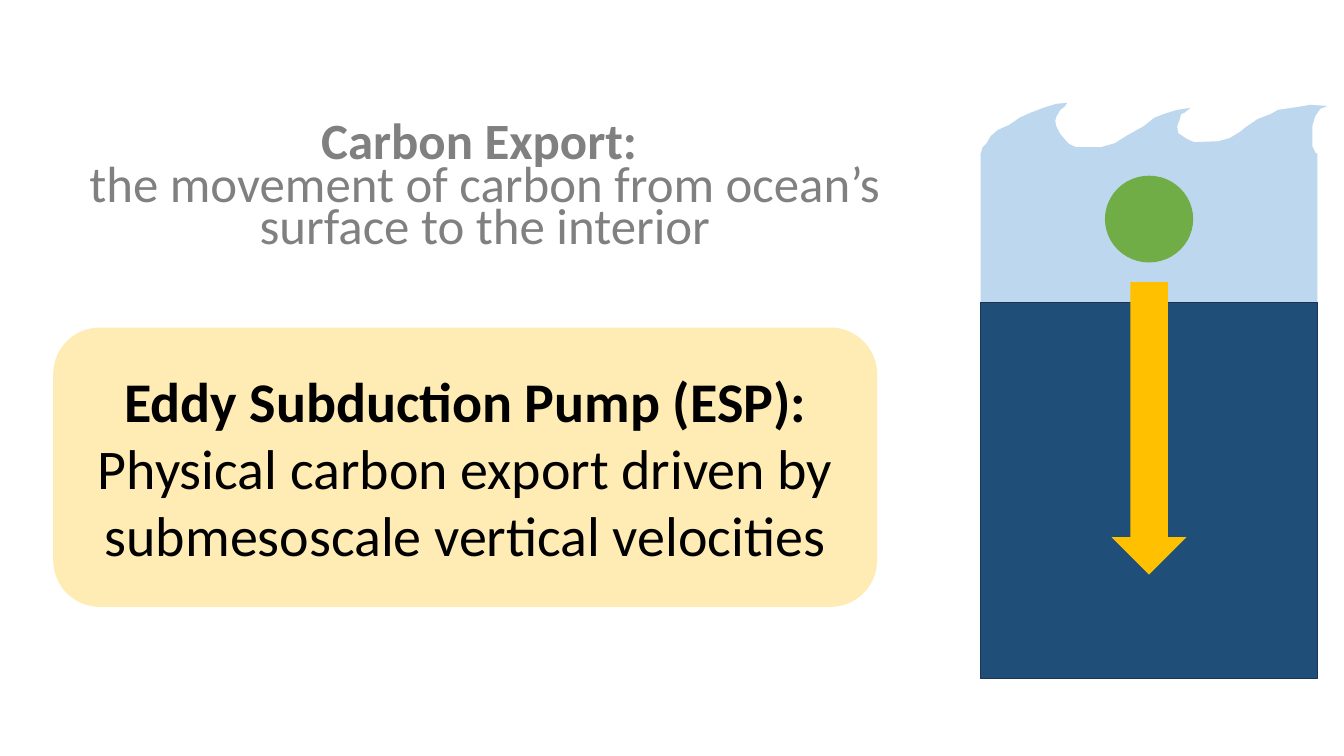
import copy

import pptx
import pptx.dml.color
import pptx.enum.shapes
import pptx.enum.text
import pptx.oxml.ns
import pptx.util
from lxml import etree

Pt = pptx.util.Pt
SHAPES = pptx.enum.shapes.MSO_SHAPE

EXPORT = [[("Carbon Export: ", True),
           ("the movement of carbon from ocean’s surface to the interior", False)]]
PUMP = [[("Eddy Subduction Pump (ESP):", True)],
        [("Physical carbon export driven by submesoscale vertical velocities", False)]]

SURFACE_BLUE = "BDD7EE"
OCEAN_LEFT, OCEAN_WIDTH = 700.5, 240.5
OCEAN_CENTER = OCEAN_LEFT + OCEAN_WIDTH / 2
WAVE_TOP = 73.5

# Wave outline, measured from the left edge and the top of the crests
WAVE = [
    (0, 36.7), (1.4, 31.7), (4.3, 28.8), (7.2, 23.8), (12.2, 19.4), (20.2, 15.8),
    (24.5, 13), (27.4, 10.8), (35.3, 7.2), (44.6, 3.6), (54, 0.7), (61.9, 0),
    (59.8, 2.9), (56.9, 5), (54, 10.1), (53.3, 13), (54, 16.6), (56.9, 22.3),
    (61.9, 28.1), (63.4, 29.5), (68.4, 31.7), (85.7, 31.7), (95.8, 28.8),
    (105.1, 23), (116.6, 16.6), (123.8, 10.8), (131, 7.9), (140.4, 5), (149.8, 3.6),
    (145.4, 7.2), (143.3, 7.9), (141.8, 13), (140.4, 16.6), (141.1, 21.6),
    (147.6, 25.9), (152.6, 28.1), (169.9, 27.4), (177.8, 25.2), (185, 20.9),
    (189.4, 17.3), (198, 11.5), (207.4, 7.9), (212.4, 5), (226.8, 2.9),
    (235.4, 1.4), (247.7, 2.2), (242.6, 4.3), (239, 9.4), (236.9, 16.6),
    (236.9, 31), (240.5, 38.2),
]


def rgb(hex_color):
    return pptx.dml.color.RGBColor.from_string(hex_color)


def paint(shape, fill, line=None, opacity=None):
    shape.shadow.inherit = False
    shape.fill.solid()
    shape.fill.fore_color.rgb = rgb(fill)
    if opacity is not None:
        color = shape.fill._xPr.find(".//" + pptx.oxml.ns.qn("a:srgbClr"))
        etree.SubElement(color, pptx.oxml.ns.qn("a:alpha"), val=str(opacity * 1000))
    if line:
        shape.line.color.rgb = rgb(line)
        shape.line.width = Pt(1)
    else:
        shape.line.fill.background()


def add_painted(kind, left, top, width, height, fill, **style):
    shape = slide.shapes.add_shape(kind, Pt(left), Pt(top), Pt(width), Pt(height))
    paint(shape, fill, **style)
    return shape


def write_text(shape, paragraphs, size, color, spacing=1.0):
    """Write centred paragraphs of (text, bold) runs, with a line break between runs."""
    frame = shape.text_frame
    frame.word_wrap = True
    frame.auto_size = pptx.enum.text.MSO_AUTO_SIZE.NONE
    frame.vertical_anchor = pptx.enum.text.MSO_ANCHOR.MIDDLE
    for index, runs in enumerate(paragraphs):
        paragraph = frame.add_paragraph() if index else frame.paragraphs[0]
        paragraph.alignment = pptx.enum.text.PP_ALIGN.CENTER
        paragraph.line_spacing = spacing
        paragraph.space_before = Pt(0)
        for position, (text, bold) in enumerate(runs):
            if position:
                paragraph.add_line_break()
                # The break takes the size of the run before it
                paragraph._p[-1].append(copy.deepcopy(run._r.rPr))
            run = paragraph.add_run()
            run.text = text
            run.font.name = "Calibri"
            run.font.size = Pt(size)
            run.font.bold = bold
            run.font.color.rgb = rgb(color)


presentation = pptx.Presentation()
presentation.slide_width, presentation.slide_height = Pt(960), Pt(540)
slide = presentation.slides.add_slide(presentation.slide_layouts[5])

title = slide.shapes.title
title.left, title.top, title.width, title.height = Pt(38), Pt(83), Pt(617), Pt(104.5)
write_text(title, EXPORT, size=36.3, color="808080", spacing=0.7)

pump = add_painted(SHAPES.ROUNDED_RECTANGLE, 38, 234, 588.5, 199.5, "FFE699", opacity=73)
write_text(pump, PUMP, size=40, color="000000")

add_painted(SHAPES.RECTANGLE, OCEAN_LEFT, 109.5, OCEAN_WIDTH, 108.5, SURFACE_BLUE)
add_painted(SHAPES.RECTANGLE, OCEAN_LEFT, 216, OCEAN_WIDTH, 268.5, "1F4E79", line="1E3256")

outline = [(Pt(OCEAN_LEFT + x), Pt(WAVE_TOP + y)) for x, y in WAVE]
builder = slide.shapes.build_freeform(*outline[0])
builder.add_line_segments(outline[1:], close=True)
paint(builder.convert_to_shape(), SURFACE_BLUE)

for kind, top, width, height, fill in [
    (SHAPES.OVAL, 125.5, 63, 62, "70AD47"),
    (SHAPES.DOWN_ARROW, 201.5, 53.5, 209, "FFC000"),
]:
    add_painted(kind, OCEAN_CENTER - width / 2, top, width, height, fill)

presentation.save("out.pptx")
